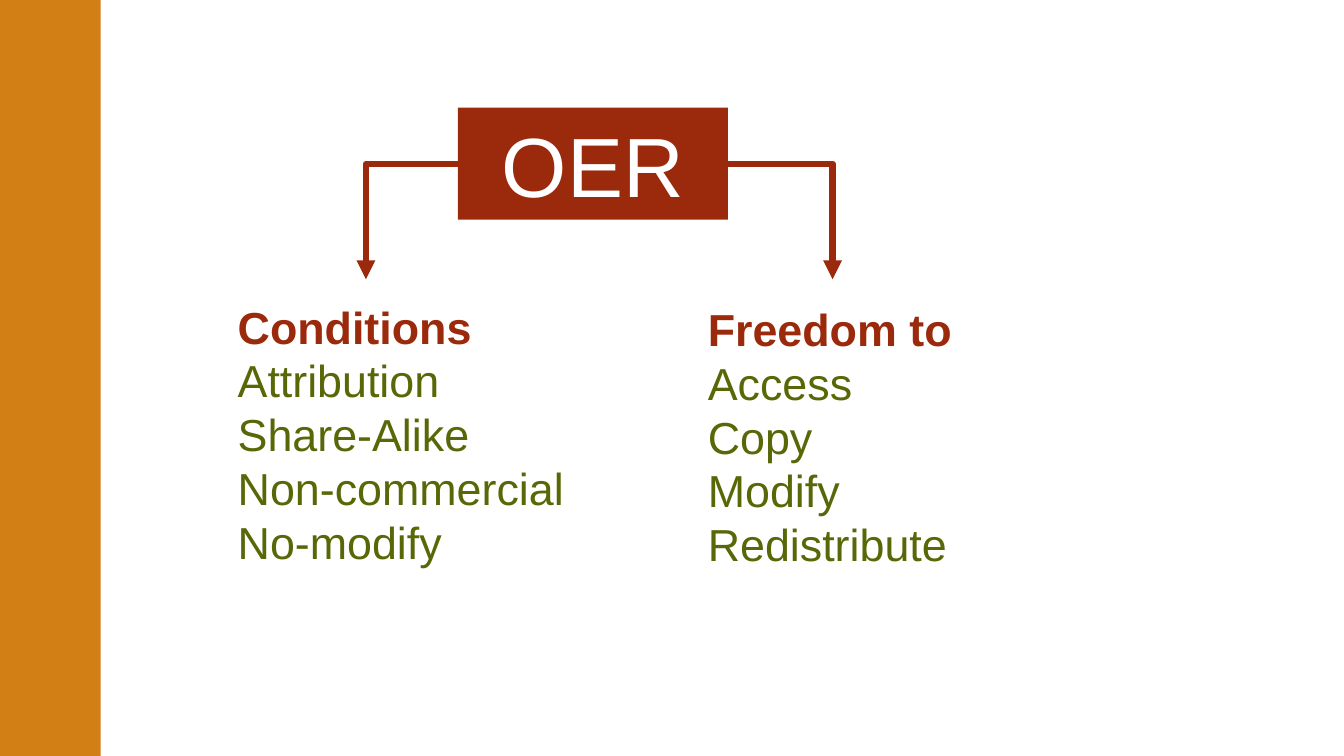
from dataclasses import dataclass

from lxml import etree
from pptx import Presentation
from pptx import util as u
from pptx.dml.color import RGBColor
from pptx.enum import shapes, text
from pptx.oxml.ns import qn

RUST = RGBColor(0x9B, 0x2A, 0x0C)
OLIVE = RGBColor(0x58, 0x68, 0x07)
ORANGE = RGBColor(0xD2, 0x7F, 0x15)
WHITE = RGBColor(0xFF, 0xFF, 0xFF)
FONT = "Arial"


@dataclass
class Box:
    left: float
    top: float
    width: float
    height: float

    def lengths(self) -> list:
        return [u.Pt(v) for v in (self.left, self.top, self.width, self.height)]


@dataclass
class Branch:
    heading: str
    items: list[str]
    box: Box
    arrow_start: float
    arrow_end: float


OER = Box(327, 77, 193, 80)
ARROW_TOP, ARROW_TIP = OER.top + OER.height / 2, 199.5
BRANCHES = [
    Branch("Conditions", ["Attribution", "Share-Alike", "Non-commercial", "No-modify"],
           Box(162.7, 210.2, 249, 223), OER.left, 261.4),
    Branch("Freedom to", ["Access", "Copy", "Modify", "Redistribute"],
           Box(498.5, 212, 192, 202), OER.left + OER.width, 594.7),
]


def set_font(p, size: float, color: RGBColor, bold: bool = False) -> None:
    p.font.name, p.font.size, p.font.bold = FONT, u.Pt(size), bold
    p.font.color.rgb = color


def add_block(s, box: Box, color: RGBColor):
    sp = s.shapes.add_shape(shapes.MSO_SHAPE.RECTANGLE, *box.lengths())
    sp.shadow.inherit = False
    sp.fill.solid()
    sp.fill.fore_color.rgb = color
    sp.line.fill.background()
    return sp


def add_list(s, branch: Branch) -> None:
    tf = s.shapes.add_textbox(*branch.box.lengths()).text_frame
    tf.word_wrap = True
    tf.text = "\n".join([branch.heading, *branch.items])
    for i, p in enumerate(tf.paragraphs):
        set_font(p, 32, OLIVE if i else RUST, bold=i == 0)


def add_arrow(s, branch: Branch) -> None:
    cx = s.shapes.add_connector(
        shapes.MSO_CONNECTOR.ELBOW, u.Pt(branch.arrow_start), u.Pt(ARROW_TOP),
        u.Pt(branch.arrow_end), u.Pt(ARROW_TIP))
    cx.line.color.rgb = RUST
    cx.line.width = u.Pt(4.5)
    # One bend, arrowhead at the tip, no shadow
    sp_pr = cx._element.spPr
    sp_pr.find(qn("a:prstGeom")).set("prst", "bentConnector2")
    etree.SubElement(sp_pr.find(qn("a:ln")), qn("a:tailEnd"), type="triangle")
    etree.SubElement(sp_pr, qn("a:effectLst"))


def main() -> None:
    prs = Presentation()
    prs.slide_width, prs.slide_height = u.Pt(960), u.Pt(540)
    s = prs.slides.add_slide(prs.slide_layouts[6])

    # Side band
    add_block(s, Box(0, 0, 72, 540), ORANGE)

    # Central term
    tf = add_block(s, OER, RUST).text_frame
    tf.vertical_anchor = text.MSO_ANCHOR.MIDDLE
    p = tf.paragraphs[0]
    p.text = "OER"
    p.alignment = text.PP_ALIGN.CENTER
    set_font(p, 60, WHITE)

    # Lists with their arrows
    for branch in BRANCHES:
        add_list(s, branch)
        add_arrow(s, branch)

    prs.save("out.pptx")


if __name__ == "__main__":
    main()
